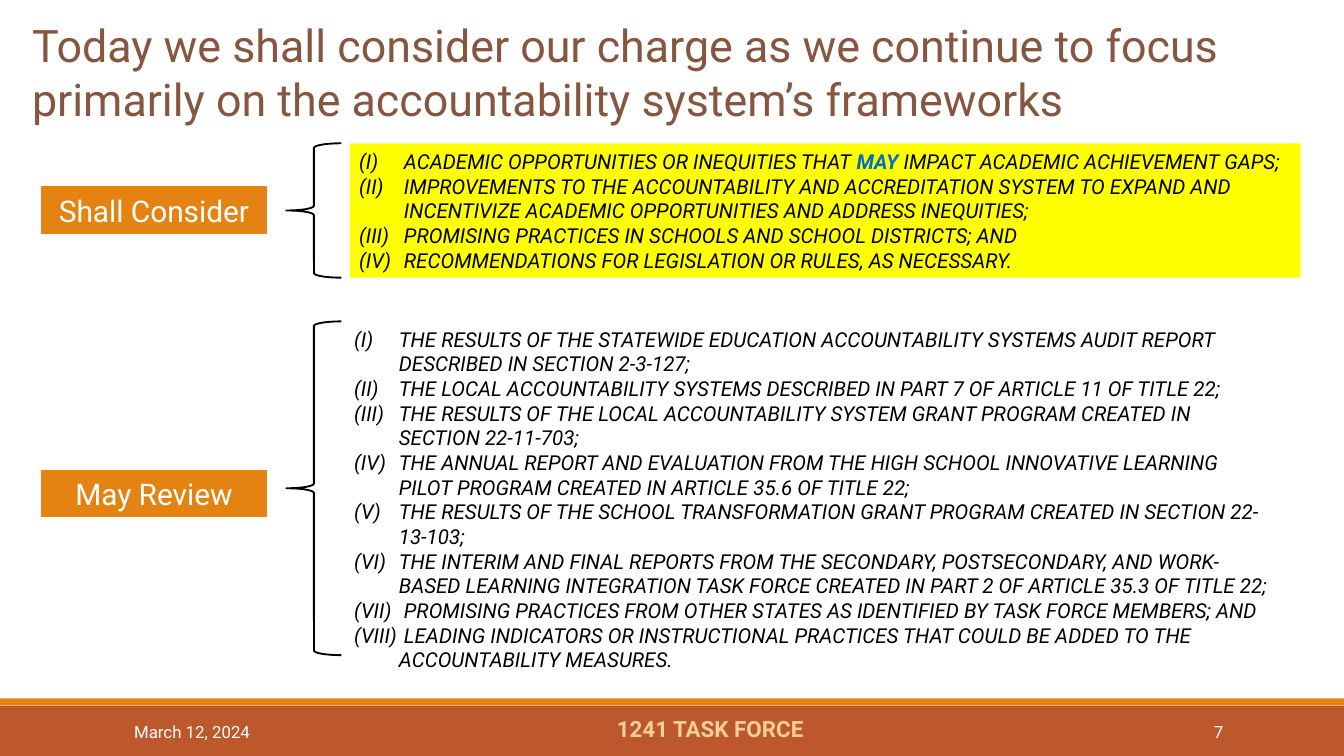
from lxml.etree import SubElement
from pptx import Presentation
from pptx.dml.color import RGBColor
from pptx.enum.shapes import MSO_SHAPE as Shape
from pptx.enum.text import MSO_ANCHOR as Anchor, MSO_AUTO_SIZE as AutoSize, PP_ALIGN as Align
from pptx.oxml.ns import qn
from pptx.util import Pt

COLORS = {
    "rust": "BD582C", "orange": "E48312", "yellow": "FFFF00", "brown": "865640",
    "peach": "F7CD9C", "blue": "0070C0", "black": "000000", "white": "FFFFFF",
}


def add_box(kind, bounds, fill=None, line=None, width=0.75):
    shape = slide.shapes.add_shape(kind, *map(Pt, bounds))
    shape.shadow.inherit = False
    for part, color in ((shape.fill, fill), (shape.line.fill, line)):
        if color:
            part.solid()
            part.fore_color.rgb = RGBColor.from_string(COLORS[color])
        else:
            part.background()
    if line:
        shape.line.width = Pt(width)
    return shape


def write(shape, paragraphs, size, color, insets=(5, 3), anchor=Anchor.TOP,
          align=Align.LEFT, numbered=False, **font_values):
    """Fill a shape; each paragraph is a list of (text, format overrides)."""
    frame = shape.text_frame
    frame_values = {
        "word_wrap": True, "auto_size": AutoSize.NONE, "vertical_anchor": anchor,
        "margin_left": Pt(insets[0]), "margin_right": Pt(insets[0]),
        "margin_top": Pt(insets[1]), "margin_bottom": Pt(insets[1]),
    }
    for name, value in frame_values.items():
        setattr(frame, name, value)
    for index, runs in enumerate(paragraphs):
        paragraph = frame.add_paragraph() if index else frame.paragraphs[0]
        paragraph.alignment = align
        if numbered:
            properties = paragraph._p.get_or_add_pPr()
            properties.set("marL", str(Pt(24)))
            properties.set("indent", str(-Pt(24)))
            bullet_color = SubElement(properties, qn("a:buClr"))
            SubElement(bullet_color, qn("a:srgbClr"), val=COLORS["black"])
            SubElement(properties, qn("a:buFont"), typeface="Roboto")
            SubElement(properties, qn("a:buAutoNum"), type="romanUcParenBoth")
        for text, overrides in runs:
            run = paragraph.add_run()
            run.text = text
            values = {"name": "Roboto", "size": Pt(size), "color": color,
                      **font_values, **overrides}
            run.font.color.rgb = RGBColor.from_string(COLORS[values.pop("color")])
            for name, value in values.items():
                setattr(run.font, name, value)


presentation = Presentation()
presentation.slide_width, presentation.slide_height = Pt(720), Pt(405)
slide = presentation.slides.add_slide(presentation.slide_layouts[5])

# Footer bands
add_box(Shape.RECTANGLE, (0, 378, 720, 27), "rust")
add_box(Shape.RECTANGLE, (0, 374.2, 720, 3.8), "orange")

# Title
title = slide.shapes.title
title.left, title.top, title.width, title.height = map(Pt, (12.2, 6.5, 736.6, 78.5))
write(title, [[("Today we shall consider our charge as we continue to focus "
                "primarily on the accountability system’s frameworks", {})]], 24, "brown")

# Labels and braces
for label, label_top, brace_top, brace_height, anchor in (
    ("Shall Consider", 100.2, 76.8, 72, Anchor.MIDDLE),
    ("May Review", 252, 172.2, 178.8, Anchor.TOP),
):
    label_box = add_box(Shape.RECTANGLE, (22.2, label_top, 120.6, 24.8), "orange", "orange")
    write(label_box, [[(label, {})]], 16, "white", anchor=anchor, align=Align.CENTER)
    brace = add_box(Shape.LEFT_BRACE, (153.4, brace_top, 29.5, brace_height), line="black", width=1)
    brace.adjustments[0] = 0.083

# Required topics
required_topics = [
    [("ACADEMIC OPPORTUNITIES OR INEQUITIES THAT ", {}),
     ("MAY ", {"color": "blue", "bold": True}),
     ("IMPACT ACADEMIC ACHIEVEMENT GAPS;", {})],
    [("IMPROVEMENTS TO THE ACCOUNTABILITY AND ACCREDITATION SYSTEM TO EXPAND AND "
      "INCENTIVIZE ACADEMIC OPPORTUNITIES AND ADDRESS INEQUITIES;", {})],
    [("PROMISING PRACTICES IN SCHOOLS AND SCHOOL DISTRICTS; AND", {})],
    [("RECOMMENDATIONS FOR LEGISLATION OR RULES, AS NECESSARY.", {})],
]
required_box = add_box(Shape.RECTANGLE, (187.4, 76.8, 509.4, 72), "yellow")
write(required_box, required_topics, 11, "black", numbered=True, italic=True)

# Optional topics
optional_topics = [
    "THE RESULTS OF THE STATEWIDE EDUCATION ACCOUNTABILITY SYSTEMS AUDIT REPORT "
    "DESCRIBED IN SECTION 2-3-127;",
    "THE LOCAL ACCOUNTABILITY SYSTEMS DESCRIBED IN PART 7 OF ARTICLE 11 OF TITLE 22;",
    "THE RESULTS OF THE LOCAL ACCOUNTABILITY SYSTEM GRANT PROGRAM CREATED IN SECTION 22-11-703;",
    "THE ANNUAL REPORT AND EVALUATION FROM THE HIGH SCHOOL INNOVATIVE LEARNING "
    "PILOT PROGRAM CREATED IN ARTICLE 35.6 OF TITLE 22;",
    "THE RESULTS OF THE SCHOOL TRANSFORMATION GRANT PROGRAM CREATED IN SECTION 22-13-103;",
    "THE INTERIM AND FINAL REPORTS FROM THE SECONDARY, POSTSECONDARY, AND WORK-BASED "
    "LEARNING INTEGRATION TASK FORCE CREATED IN PART 2 OF ARTICLE 35.3 OF TITLE 22;",
    " PROMISING PRACTICES FROM OTHER STATES AS IDENTIFIED BY TASK FORCE MEMBERS; AND",
    " LEADING INDICATORS OR INSTRUCTIONAL PRACTICES THAT COULD BE ADDED TO THE "
    "ACCOUNTABILITY MEASURES.",
]
optional_box = slide.shapes.add_textbox(*map(Pt, (182.6, 167.8, 506.2, 176.4)))
write(optional_box, [[(topic, {})] for topic in optional_topics], 11, "black",
      insets=(7.2, 7.2), numbered=True, italic=True)

# Footer text
for text, bounds, size, color, bold, inset, anchor, align in (
    ("March 12, 2024", (64.8, 381.4, 146.2, 21.6), 9, "white", False, 3.6, Anchor.MIDDLE, Align.LEFT),
    ("1241 TASK FORCE", (267.8, 375.8, 225.4, 29), 12, "peach", True, 7.2, Anchor.TOP, Align.CENTER),
    ("7", (584.6, 381.4, 77.8, 21.6), 9, "white", False, 3.6, Anchor.MIDDLE, Align.RIGHT),
):
    footer = slide.shapes.add_textbox(*map(Pt, bounds))
    write(footer, [[(text, {})]], size, color, insets=(7.2, inset), anchor=anchor,
          align=align, bold=bold)

presentation.save("out.pptx")
